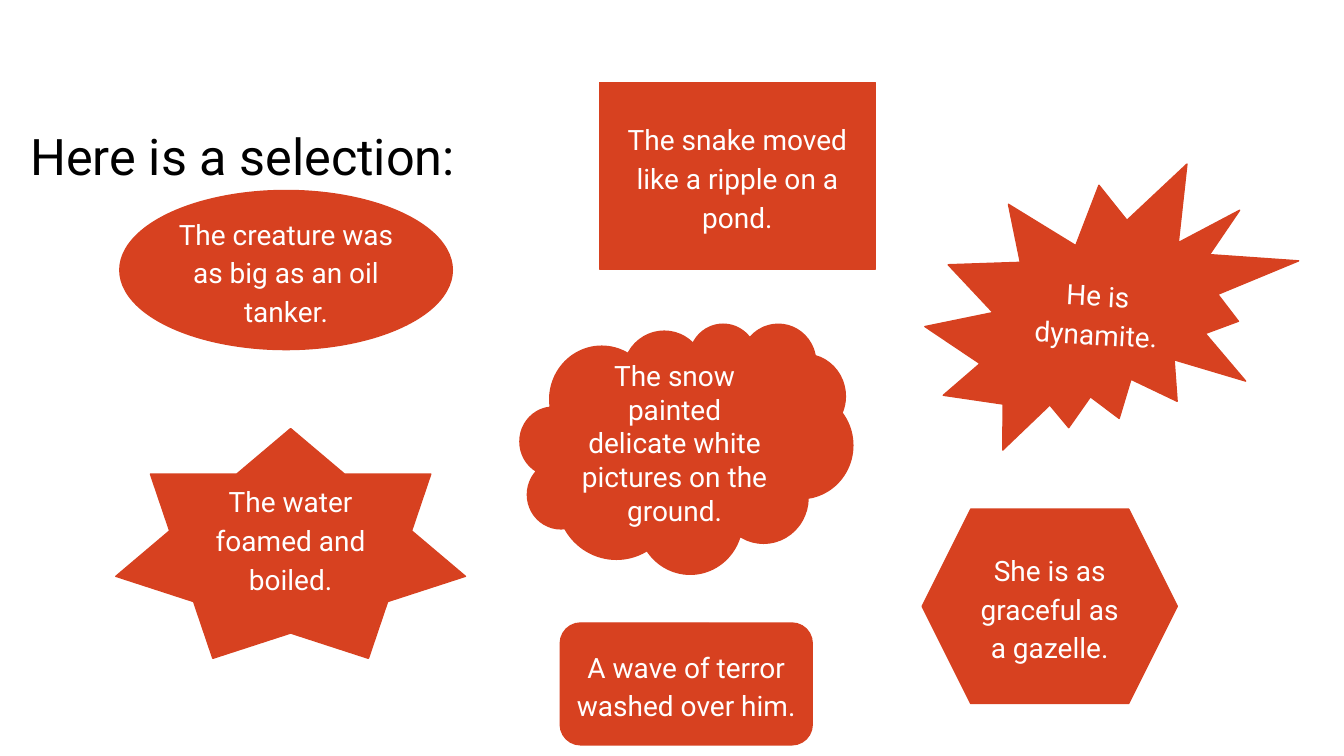
"""Build a slide with a selection of figurative sentences in assorted shapes."""
from dataclasses import dataclass
from typing import Optional

import pptx
import pptx.dml.color
import pptx.enum.shapes
import pptx.enum.text
import pptx.util

Cm = pptx.util.Cm
Pt = pptx.util.Pt
RGB = pptx.dml.color.RGBColor
MSO = pptx.enum.shapes.MSO_SHAPE
ALIGN = pptx.enum.text.PP_ALIGN


@dataclass(frozen=True)
class Theme:
    font: str = "Roboto"
    title_size: int = 36
    body_size: int = 20
    accent: str = "D74120"
    dark: str = "000000"
    light: str = "FFFFFF"


@dataclass(frozen=True)
class Bubble:
    kind: MSO
    left: float
    top: float
    width: float
    height: float
    text: str
    rotation: float = 0
    line_spacing: Optional[float] = 1.15
    space_after: float = 8


THEME = Theme()

BUBBLES = [
    Bubble(MSO.OVAL, 3.02, 4.8, 8.38, 4.01, "The creature was as big as an oil tanker."),
    Bubble(MSO.RECTANGLE, 15.11, 2.08, 6.95, 4.7, "The snake moved like a ripple on a pond."),
    Bubble(MSO.STAR_7_POINT, 2.92, 10.8, 8.81, 5.79, "The water foamed and boiled."),
    Bubble(MSO.EXPLOSION2, 23.34, 4.04, 9.32, 7.44, "He is dynamite.", rotation=3),
    Bubble(MSO.HEXAGON, 23.24, 12.83, 6.43, 4.9, "She is as graceful as a gazelle."),
    Bubble(MSO.ROUNDED_RECTANGLE, 14.12, 15.7, 6.35, 3.07, "A wave of terror washed over him."),
    Bubble(MSO.CLOUD, 13.11, 8.15, 8.38, 6.3,
           "The snow painted delicate white pictures on the ground.",
           line_spacing=None, space_after=0),
]


def write(sp, text: str, *, size: float, color: str, align: ALIGN,
          line_spacing: Optional[float] = 1.15, space_after: float = 8) -> None:
    tf = sp.text_frame
    tf.word_wrap = True
    tf.auto_size = pptx.enum.text.MSO_AUTO_SIZE.NONE
    tf.vertical_anchor = pptx.enum.text.MSO_ANCHOR.MIDDLE
    p = tf.paragraphs[0]
    p.alignment = align
    p.line_spacing = line_spacing
    p.space_before = Pt(0)
    p.space_after = Pt(space_after)
    r = p.add_run()
    r.text = text
    r.font.name = THEME.font
    r.font.size = Pt(size)
    r.font.color.rgb = RGB.from_string(color)


def add_title(s, text: str) -> None:
    sp = s.shapes.title
    sp.left, sp.top, sp.width, sp.height = Cm(0.51), Cm(2.79), Cm(32.31), Cm(2.01)
    write(sp, text, size=THEME.title_size, color=THEME.dark, align=ALIGN.LEFT)


def add_bubble(s, b: Bubble) -> None:
    sp = s.shapes.add_shape(b.kind, Cm(b.left), Cm(b.top), Cm(b.width), Cm(b.height))
    sp.rotation = b.rotation
    sp.shadow.inherit = False
    sp.fill.solid()
    sp.fill.fore_color.rgb = RGB.from_string(THEME.accent)
    sp.line.color.rgb = RGB.from_string(THEME.accent)
    sp.line.width = Pt(1)
    write(sp, b.text, size=THEME.body_size, color=THEME.light, align=ALIGN.CENTER,
          line_spacing=b.line_spacing, space_after=b.space_after)


def main() -> None:
    prs = pptx.Presentation()
    prs.slide_width, prs.slide_height = Cm(33.87), Cm(19.05)
    s = prs.slides.add_slide(prs.slide_layouts.get_by_name("Title Only"))
    add_title(s, "Here is a selection:")
    for b in BUBBLES:
        add_bubble(s, b)
    prs.save("out.pptx")


if __name__ == "__main__":
    main()
